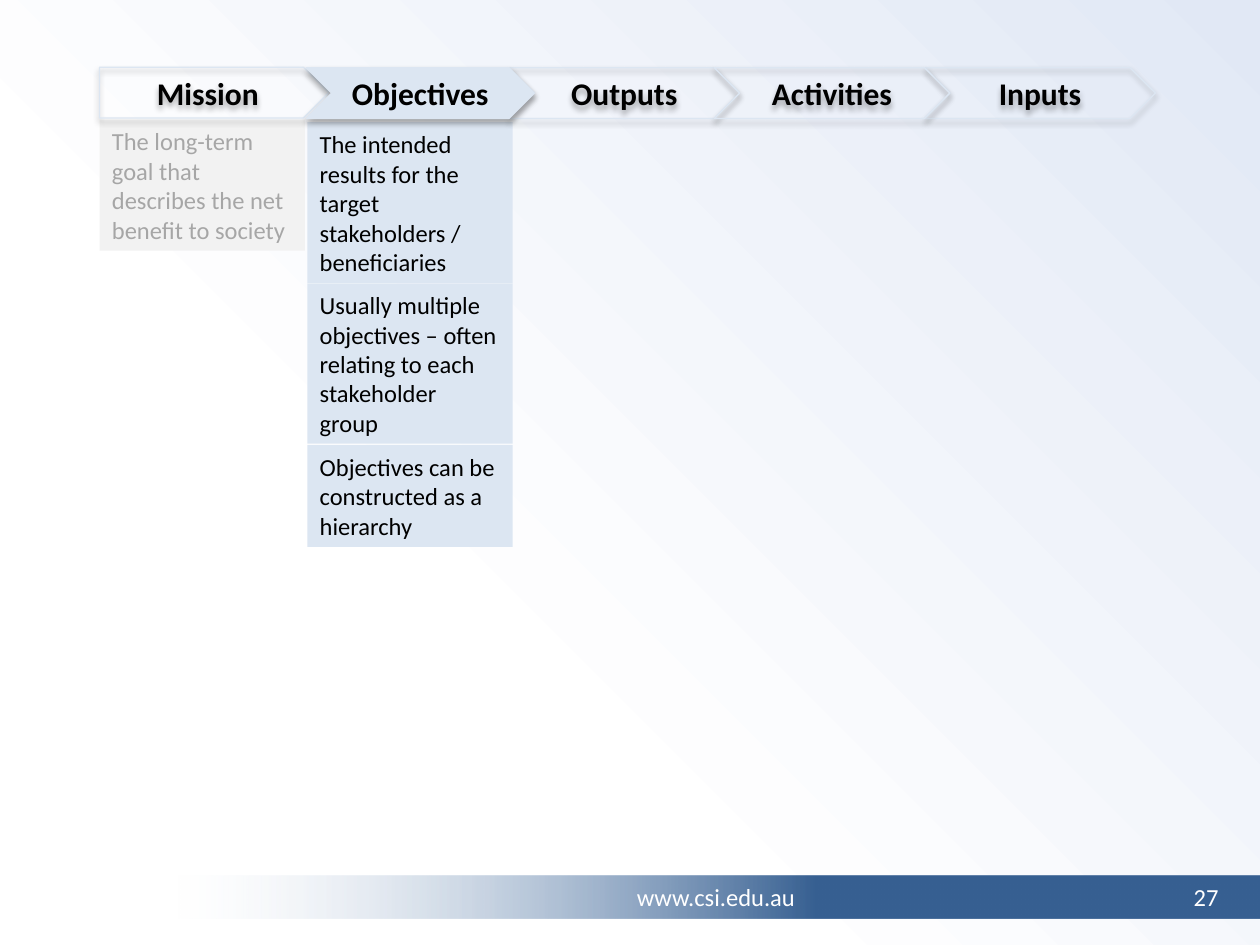
from dataclasses import dataclass
from typing import Optional

from lxml.etree import SubElement
from pptx import Presentation
from pptx.dml.color import RGBColor
from pptx.enum.shapes import MSO_SHAPE as Preset
from pptx.enum.text import MSO_ANCHOR as Anchor, PP_ALIGN as Align
from pptx.oxml import parse_xml
from pptx.oxml.ns import nsdecls, qn
from pptx.util import Pt

BLACK = RGBColor(0x00, 0x00, 0x00)
WHITE = RGBColor(0xFF, 0xFF, 0xFF)
GREY_TEXT = RGBColor(0xA6, 0xA6, 0xA6)
GREY_FILL = RGBColor(0xF2, 0xF2, 0xF2)
PALE_BLUE = RGBColor(0xDC, 0xE6, 0xF2)
DEEP_BLUE = RGBColor(0x37, 0x60, 0x92)
BACKGROUND_BLUE = RGBColor(0xE1, 0xE8, 0xF5)

BODY = {"name": "Calibri", "size": Pt(14)}
HEADING = {"name": "Calibri", "size": Pt(18), "bold": True}

COLUMN_WIDTH = 117.4
MISSION_LEFT = 56.9
OBJECTIVES_LEFT = 175.6
STEP_TOP = 38.7
STEP_HEIGHT = 29
FOOTER_TOP = 500.4
FOOTER_HEIGHT = 24.5


@dataclass
class Panel:
    text: str
    left: float
    top: float
    height: float
    fill: RGBColor = PALE_BLUE
    color: RGBColor = BLACK


@dataclass
class Step:
    text: str
    left: float
    width: float
    preset: Preset = Preset.CHEVRON
    top: float = STEP_TOP
    fill: Optional[RGBColor] = None


PANELS = [
    Panel("The intended results for the target stakeholders / beneficiaries",
          OBJECTIVES_LEFT, 69.8, 92.2),
    Panel("Usually multiple objectives – often relating to each stakeholder group",
          OBJECTIVES_LEFT, 162, 91.6),
    Panel("The long-term goal that describes the net benefit to society",
          MISSION_LEFT, 68.4, 74.9, GREY_FILL, GREY_TEXT),
    Panel("Objectives can be constructed as a hierarchy",
          OBJECTIVES_LEFT, 254.2, 58.3),
]

STEPS = [
    Step("Mission", MISSION_LEFT, 131, Preset.PENTAGON, 38.4),
    Step("Outputs", 290.9, 131.8),
    Step("Inputs", 528.5, 131.8),
    Step("Objectives", 175, 130.3, fill=PALE_BLUE),
    Step("Activities", 408.2, 134.6),
]


def set_background(slide) -> None:
    slide.background.fill.solid()
    properties = slide.background.fill._xPr
    properties.replace(properties[0], parse_xml(
        f'<a:gradFill {nsdecls("a")} rotWithShape="1"><a:gsLst>'
        f'<a:gs pos="35000"><a:srgbClr val="{WHITE}"/></a:gs>'
        f'<a:gs pos="100000"><a:srgbClr val="{BACKGROUND_BLUE}"/></a:gs></a:gsLst>'
        '<a:path path="circle"><a:fillToRect t="100000" r="100000"/></a:path>'
        '</a:gradFill>'))


def write_text(shape, text: str, align: Align, color: RGBColor, font: dict) -> None:
    frame = shape.text_frame
    frame.word_wrap = True
    frame.vertical_anchor = Anchor.MIDDLE
    paragraph = frame.paragraphs[0]
    paragraph.text = text
    paragraph.alignment = align
    for name, value in font.items():
        setattr(paragraph.font, name, value)
    paragraph.font.color.rgb = color


def add_panel(slide, panel: Panel) -> None:
    shape = slide.shapes.add_shape(Preset.RECTANGLE, Pt(panel.left), Pt(panel.top),
                                   Pt(COLUMN_WIDTH), Pt(panel.height))
    shape.shadow.inherit = False
    shape.fill.solid()
    shape.fill.fore_color.rgb = panel.fill
    shape.line.fill.background()
    write_text(shape, panel.text, Align.LEFT, panel.color, BODY)


def add_shadow(shape) -> None:
    shape.shadow.inherit = False
    effects = shape._element.spPr.find(qn("a:effectLst"))
    shadow = SubElement(effects, qn("a:outerShdw"), blurRad=str(Pt(3.5)),
                        dist=str(Pt(2.2)), dir="5400000", rotWithShape="0")
    color = SubElement(shadow, qn("a:srgbClr"), val=str(BLACK))
    SubElement(color, qn("a:alpha"), val="32000")


def add_step(slide, step: Step) -> None:
    shape = slide.shapes.add_shape(step.preset, Pt(step.left), Pt(step.top),
                                   Pt(step.width), Pt(STEP_HEIGHT))
    if step.fill is None:
        shape.fill.background()
    else:
        shape.fill.solid()
        shape.fill.fore_color.rgb = step.fill
    shape.line.color.rgb = PALE_BLUE
    shape.line.width = Pt(0.75)
    add_shadow(shape)
    write_text(shape, step.text, Align.CENTER, BLACK, HEADING)


def add_footer(slide) -> None:
    bar = slide.shapes.add_shape(Preset.RECTANGLE, Pt(101.5), Pt(FOOTER_TOP),
                                 Pt(618.5), Pt(FOOTER_HEIGHT))
    bar.shadow.inherit = False
    bar.line.fill.background()
    bar.fill.gradient()
    bar.fill.gradient_angle = 0
    for stop, position, color in zip(bar.fill.gradient_stops, (0, 0.59),
                                     (PALE_BLUE, DEEP_BLUE)):
        stop.position = position
        stop.color.rgb = color
    first_color = next(bar._element.spPr.iter(qn("a:srgbClr")))
    SubElement(first_color, qn("a:alpha"), val="0")
    write_text(bar, "www.csi.edu.au ", Align.CENTER, WHITE, BODY)

    number = slide.shapes.add_textbox(Pt(663.8), Pt(FOOTER_TOP), Pt(39.6),
                                      Pt(FOOTER_HEIGHT))
    write_text(number, "27", Align.RIGHT, WHITE, BODY)


def main() -> None:
    presentation = Presentation()
    presentation.slide_width = Pt(720)
    presentation.slide_height = Pt(540)
    slide = presentation.slides.add_slide(presentation.slide_layouts[6])
    set_background(slide)
    add_footer(slide)
    for panel in PANELS:
        add_panel(slide, panel)
    for step in STEPS:
        add_step(slide, step)
    presentation.save("out.pptx")


if __name__ == "__main__":
    main()
